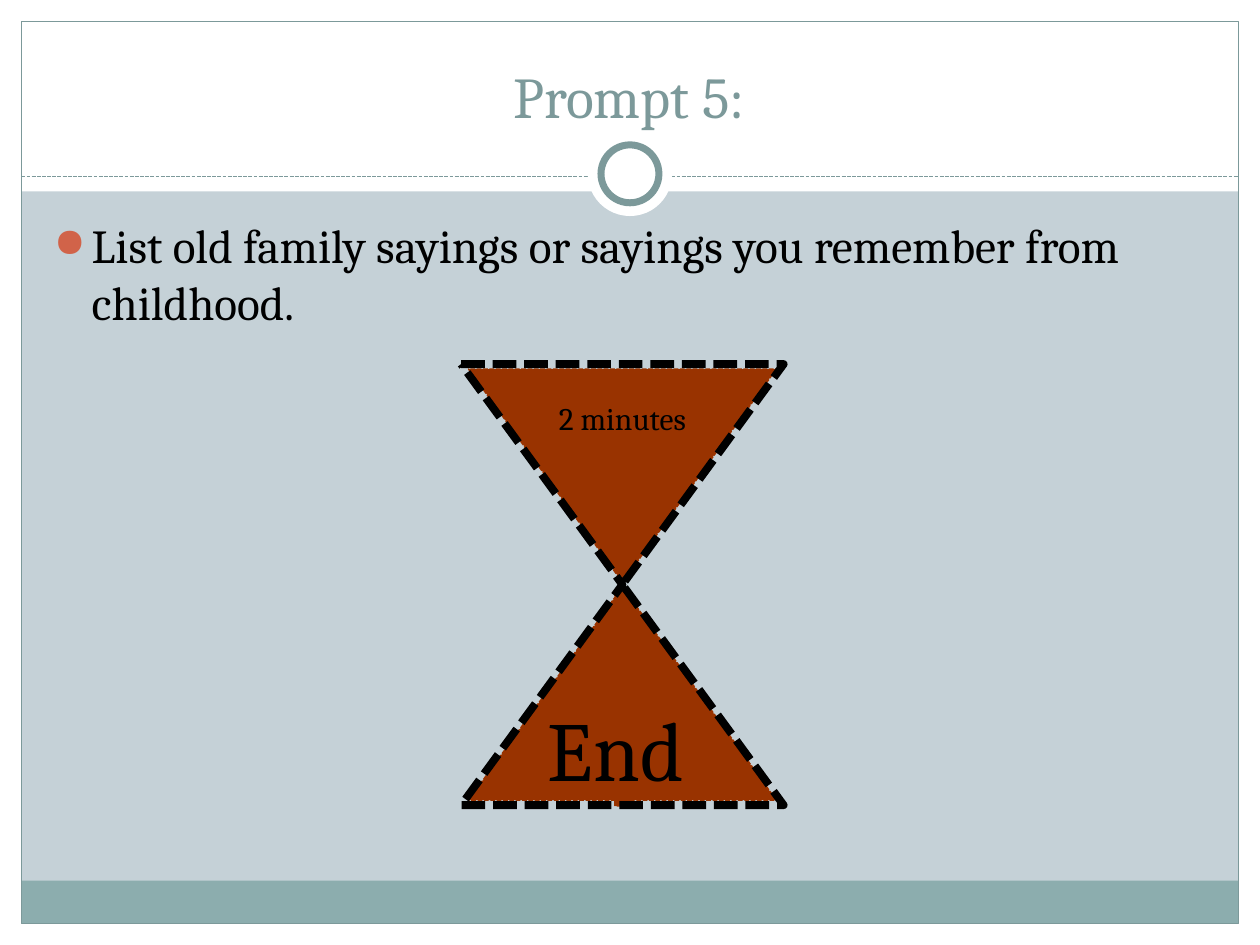
from lxml import etree
from pptx import Presentation
from pptx.dml.color import RGBColor
from pptx.enum.dml import MSO_LINE
from pptx.enum.shapes import MSO_CONNECTOR, MSO_SHAPE
from pptx.enum.text import MSO_ANCHOR, MSO_AUTO_SIZE, PP_ALIGN
from pptx.oxml.ns import qn
from pptx.util import Inches, Pt

RECTANGLE, OVAL = MSO_SHAPE.RECTANGLE, MSO_SHAPE.OVAL
TRIANGLE, PENTAGON = MSO_SHAPE.ISOSCELES_TRIANGLE, MSO_SHAPE.PENTAGON
COLLATE = MSO_SHAPE.FLOWCHART_COLLATE
DASH = MSO_LINE.SQUARE_DOT
LEFT, CENTER = PP_ALIGN.LEFT, PP_ALIGN.CENTER

WHITE = RGBColor(0xFF, 0xFF, 0xFF)
BLACK = RGBColor(0x00, 0x00, 0x00)
MIST = RGBColor(0xC5, 0xD1, 0xD7)
TEAL = RGBColor(0x8C, 0xAD, 0xAE)
SLATE = RGBColor(0x7C, 0x99, 0x9A)
RUST = RGBColor(0x99, 0x33, 0x00)
CORAL = "D16349"

FONT = "Cambria"
WIDTH, HEIGHT, MARGIN = 10, 7.5, 0.17
HEADER, RULE_TOP, FOOTER_TOP = 1.52, 1.4, 6.99
RING_MIDDLE = 1.38
GLASS_MIDDLE, GLASS_CENTER = 4.94, 4.64
BULB_WIDTH, BULB_HEIGHT, NECK = 2.44, 1.69, 0.04


def place(shape, left, top, width, height):
    """Position a shape in inches."""
    shape.left, shape.top = Inches(left), Inches(top)
    shape.width, shape.height = Inches(width), Inches(height)


def add_figure(page, kind, area, fill=None, line=None, weight=0.75, dash=None):
    """Add a flat preset shape with an optional fill and outline."""
    shape = page.shapes.add_shape(kind, *map(Inches, area))
    shape.shadow.inherit = False
    if fill is None:
        shape.fill.background()
    else:
        shape.fill.solid()
        shape.fill.fore_color.rgb = fill
    if line is None:
        shape.line.fill.background()
    else:
        shape.line.color.rgb = line
        shape.line.width = Pt(weight)
        shape.line.dash_style = dash
    return shape


def add_centered(page, kind, middle, center, width, height, **style):
    """Add a shape around its centre point."""
    area = (middle - width / 2, center - height / 2, width, height)
    return add_figure(page, kind, area, **style)


def write(box, text, size, color, align):
    """Fill a box with one formatted paragraph."""
    box.text_frame.text = text
    para = box.text_frame.paragraphs[0]
    para.alignment = align
    para.font.name, para.font.size = FONT, Pt(size)
    para.font.color.rgb = color
    return para


def add_label(page, area, text, size, align):
    """Add an unwrapped text box that grows with its text."""
    box = page.shapes.add_textbox(*map(Inches, area))
    write(box, text, size, BLACK, align)
    box.text_frame.word_wrap = False
    box.text_frame.auto_size = MSO_AUTO_SIZE.SHAPE_TO_FIT_TEXT


def add_bullet(para, indent):
    """Give a paragraph a coloured round bullet and a hanging indent."""
    props = para._p.get_or_add_pPr()
    props.set("marL", str(Inches(indent)))
    props.set("indent", str(-Inches(indent)))
    color = etree.SubElement(props, qn("a:buClr"))
    etree.SubElement(color, qn("a:srgbClr"), val=CORAL)
    etree.SubElement(props, qn("a:buSzPct"), val="85000")
    etree.SubElement(props, qn("a:buChar"), char="●")
    props.append(props.find(qn("a:defRPr")))


def add_rule(page):
    """Draw the dashed line under the title."""
    rule = page.shapes.add_connector(
        MSO_CONNECTOR.STRAIGHT, Inches(MARGIN), Inches(RULE_TOP),
        Inches(WIDTH - MARGIN), Inches(RULE_TOP))
    rule.line.color.rgb = SLATE
    rule.line.width = Pt(0.75)
    rule.line.dash_style = DASH
    etree.SubElement(rule._element.spPr, qn("a:effectLst"))


def add_frame(page):
    """Draw the white margins, footer band, border, rule and ring."""
    inner = WIDTH - 2 * MARGIN
    bottom = HEIGHT - MARGIN
    for area in ((0, bottom, WIDTH, MARGIN), (0, 0, WIDTH, HEADER),
                 (0, 0, MARGIN, HEIGHT), (WIDTH - MARGIN, 0, MARGIN, HEIGHT)):
        add_figure(page, RECTANGLE, area, WHITE)
    add_figure(page, RECTANGLE, (MARGIN, FOOTER_TOP, inner, bottom - FOOTER_TOP), TEAL)
    add_figure(page, RECTANGLE, (MARGIN, MARGIN, inner, HEIGHT - 2 * MARGIN), line=SLATE)
    add_rule(page)
    add_centered(page, OVAL, WIDTH / 2, RING_MIDDLE, 0.67, 0.67, fill=WHITE)
    add_centered(page, OVAL, WIDTH / 2, RING_MIDDLE, 0.46, 0.46,
                 fill=WHITE, line=SLATE, weight=4)


def add_title(page, text):
    """Place the title above the frame shapes."""
    title = page.shapes.title
    place(title, 0.33, 0.25, 9.33, 0.83)
    write(title, text, 33, SLATE, CENTER)
    title.text_frame.vertical_anchor = MSO_ANCHOR.BOTTOM
    page.shapes._spTree.append(title._element)


def add_prompt(page, text):
    """Add the bulleted prompt."""
    box = page.shapes.add_textbox(*map(Inches, (0.33, 1.67, 9.3, 1.22)))
    box.text_frame.word_wrap = True
    para = write(box, text, 27, BLACK, LEFT)
    para.space_before = Pt(5.4)
    add_bullet(para, 0.3)


def add_hourglass(page):
    """Draw two sand bulbs, the falling stream, the glass and its labels."""
    sand = {"fill": RUST, "line": RUST, "weight": 0.9, "dash": DASH}
    offset = (BULB_HEIGHT + NECK) / 2
    for side, turn in ((1, 0), (-1, 180)):
        bulb = add_centered(page, TRIANGLE, GLASS_MIDDLE, GLASS_CENTER + side * offset,
                            BULB_WIDTH, BULB_HEIGHT, **sand)
        bulb.rotation = turn
    stream = add_centered(page, PENTAGON, GLASS_MIDDLE, 5.53, 1.73, 0.12, **sand)
    stream.rotation = 270
    add_centered(page, COLLATE, GLASS_MIDDLE, GLASS_CENTER, 2.56, 3.5,
                 line=BLACK, weight=4.5, dash=DASH)
    add_label(page, (4.29, 3.12, 1.3, 0.4), "2 minutes", 18, CENTER)
    add_label(page, (4.25, 5.49, 1.39, 0.9), "End", 48, LEFT)


def main():
    """Build and save the slide."""
    deck = Presentation()
    deck.slide_width, deck.slide_height = Inches(WIDTH), Inches(HEIGHT)
    page = deck.slides.add_slide(deck.slide_layouts[5])
    page.background.fill.solid()
    page.background.fill.fore_color.rgb = MIST
    add_frame(page)
    add_title(page, "Prompt 5:")
    add_prompt(page, "List old family sayings or sayings you remember from childhood.")
    add_hourglass(page)
    deck.save("out.pptx")


if __name__ == "__main__":
    main()
